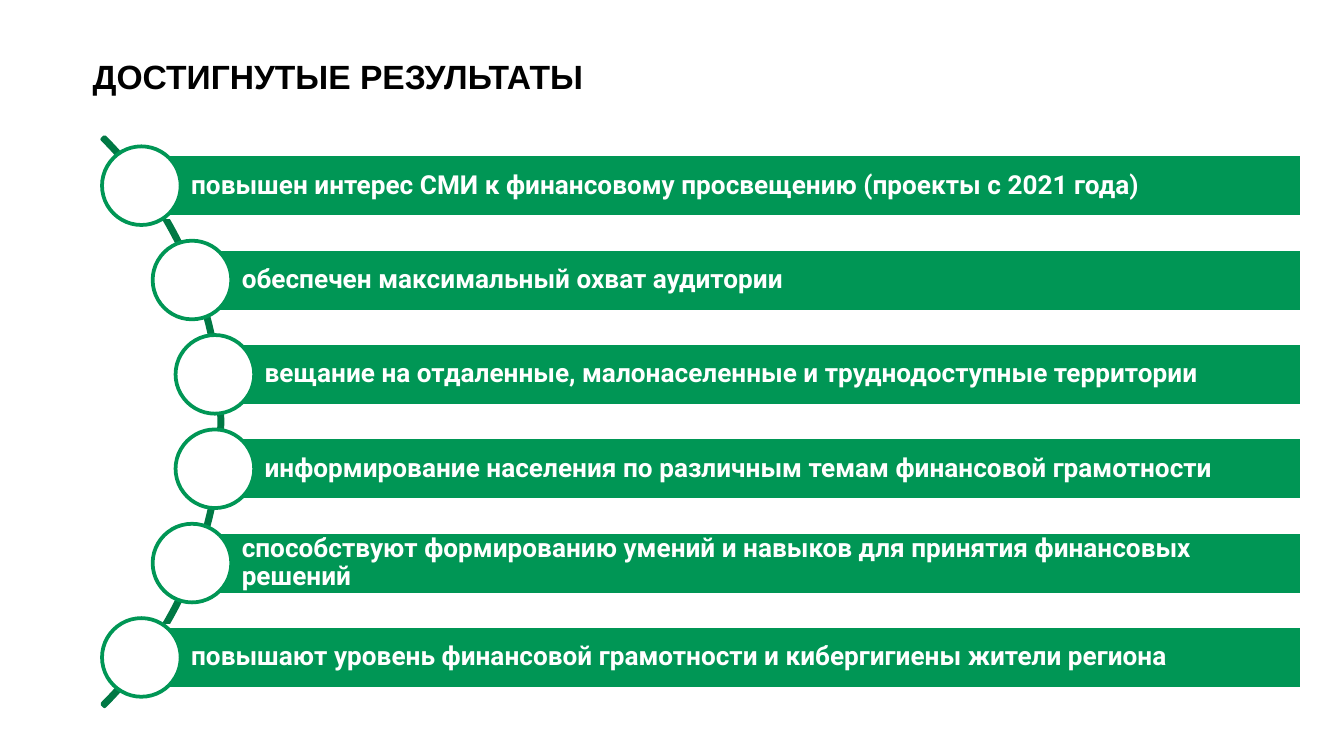
import math

from pptx import Presentation, util as u
from pptx.dml.color import RGBColor
from pptx.enum import shapes, text

SHAPE = shapes.MSO_SHAPE
GREEN, DARK_GREEN, WHITE, BLACK = "009655", "007844", "FFFFFF", "000000"
WIDTH = 10
HEIGHT = WIDTH * 9 / 16
COLUMN = WIDTH / 100
RESULTS = [
    "повышен интерес СМИ к финансовому просвещению (проекты с 2021 года)",
    "обеспечен максимальный охват аудитории",
    "вещание на отдаленные, малонаселенные и труднодоступные территории",
    "информирование населения по различным темам финансовой грамотности",
    "способствуют формированию умений и навыков для принятия финансовых решений",
    "повышают уровень финансовой грамотности и кибергигиены жители региона",
]


def color(value):
    """Turn a hex string into a colour."""
    return RGBColor.from_string(value)


def grid(*lengths):
    """Turn lengths in grid columns into slide lengths."""
    return [u.Inches(length * COLUMN) for length in lengths]


def add_shape(slide, kind, box, fill, line):
    """Add a preset shape with a two-point outline."""
    shape = slide.shapes.add_shape(kind, *grid(*box))
    shape.shadow.inherit = False
    if fill:
        shape.fill.solid()
        shape.fill.fore_color.rgb = color(fill)
    else:
        shape.fill.background()
    shape.line.color.rgb = color(line)
    shape.line.width = u.Pt(2)
    return shape


def write(shape, words, *, font, size, fill, anchor, insets, spacing=1.0):
    """Write one bold left-aligned paragraph into a shape."""
    frame = shape.text_frame
    frame.word_wrap = True
    frame.vertical_anchor = anchor
    (frame.margin_left, frame.margin_top,
     frame.margin_right, frame.margin_bottom) = grid(*insets)
    paragraph = frame.paragraphs[0]
    paragraph.alignment = text.PP_ALIGN.LEFT
    paragraph.line_spacing = spacing
    run = paragraph.add_run()
    run.text = words
    run.font.name = font
    run.font.size = u.Pt(size)
    run.font.bold = True
    run.font.color.rgb = color(fill)


def add_title(slide, box, words):
    """Place the slide heading in its box."""
    write(slide.shapes.add_textbox(*grid(*box)), words, font="Arial", size=18,
          fill=BLACK, anchor=text.MSO_ANCHOR.TOP, insets=(0, 0, 0, 0))


def add_result(slide, box, words):
    """Place a bar with a circle centred on its left edge."""
    left, top, width, height = box
    bar = add_shape(slide, SHAPE.RECTANGLE, box, GREEN, WHITE)
    write(bar, words, font="Roboto", size=14, fill=WHITE, spacing=0.9,
          anchor=text.MSO_ANCHOR.MIDDLE, insets=(3.7, 0.4, 0.4, 0.4))
    diameter = height * 1.25
    circle = (left - diameter / 2, top + (height - diameter) / 2, diameter, diameter)
    add_shape(slide, SHAPE.OVAL, circle, WHITE, GREEN)


def add_curved_list(slide, box, results):
    """Place the arc and hang the result bars along it."""
    left, top, right, diameter = box
    radius = diameter / 2
    arc = add_shape(slide, SHAPE.BLOCK_ARC, (left, top, diameter, diameter),
                    None, DARK_GREEN)
    for index, value in enumerate((189, 27, 0.004)):
        arc.adjustments[index] = value
    pitch, bar_height = 7.02, 4.68
    for index, words in enumerate(results):
        offset = (index - (len(results) - 1) / 2) * pitch
        start = left + radius + math.sqrt(radius ** 2 - offset ** 2) - 0.35
        bar_top = top + radius + offset - bar_height / 2
        add_result(slide, (start, bar_top, right - start, bar_height), words)


def main():
    """Build and save the slide."""
    presentation = Presentation()
    presentation.slide_width = u.Inches(WIDTH)
    presentation.slide_height = u.Inches(HEIGHT)
    slide = presentation.slides.add_slide(presentation.slide_layouts[6])
    add_title(slide, (6.9, 4.15, 75.3, 7.5), "ДОСТИГНУТЫЕ РЕЗУЛЬТАТЫ")
    add_curved_list(slide, (-43.35, 1.42, 96.9, 59.9), RESULTS)
    presentation.save("out.pptx")


if __name__ == "__main__":
    main()
